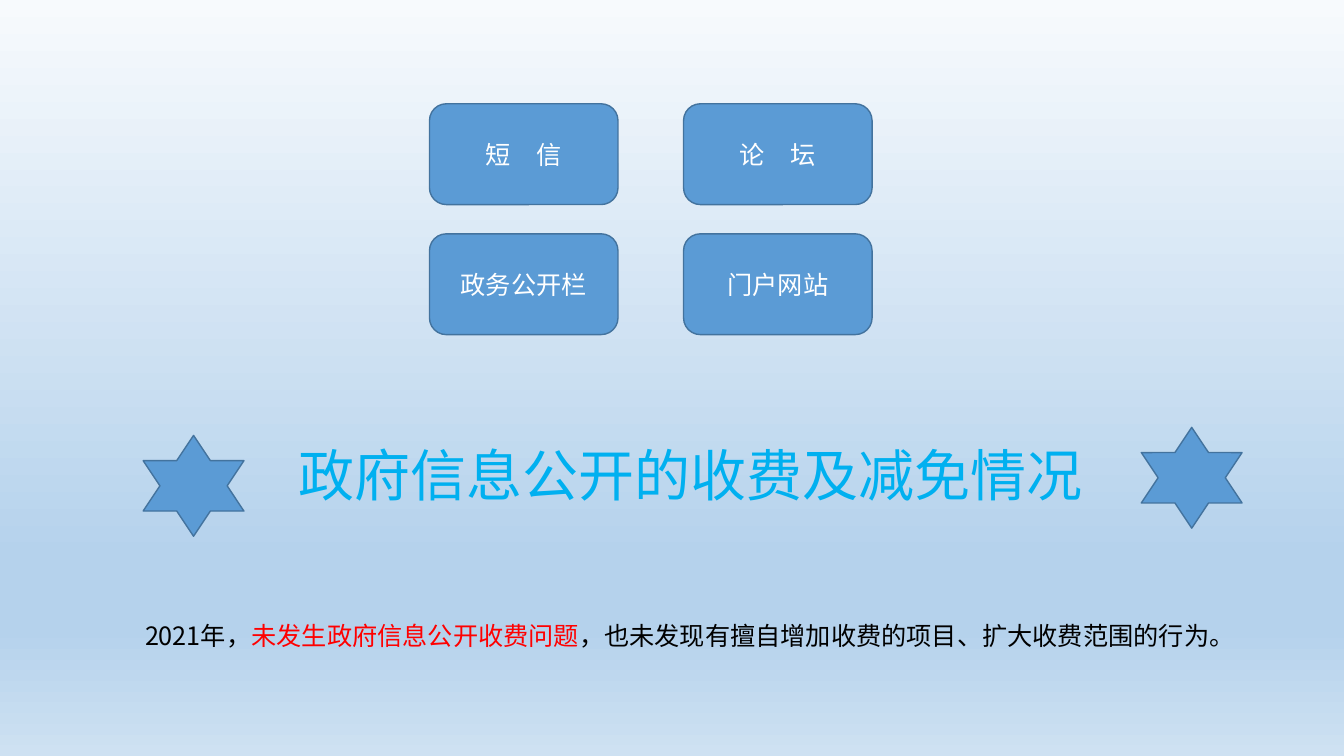
from lxml import etree
from pptx import Presentation
from pptx.dml.color import RGBColor
from pptx.enum.shapes import MSO_SHAPE as SHAPE
from pptx.enum.text import MSO_ANCHOR as ANCHOR, PP_ALIGN as ALIGN
from pptx.oxml.ns import qn
from pptx.util import Inches, Pt

BLUE = RGBColor(0x5B, 0x9B, 0xD5)
OUTLINE = RGBColor(0x43, 0x73, 0x9E)
SKY = RGBColor(0x00, 0xB0, 0xF0)
RED = RGBColor(0xFF, 0x00, 0x00)
BLACK = RGBColor(0x00, 0x00, 0x00)
WHITE = RGBColor(0xFF, 0xFF, 0xFF)
BACKGROUND = [
    (0, RGBColor(0xF7, 0xFA, 0xFD)),
    (74, RGBColor(0xB5, 0xD2, 0xEC)),
    (83, RGBColor(0xB5, 0xD2, 0xEC)),
    (100, RGBColor(0xCE, 0xE1, 0xF2)),
]
CJK_FONT = "Noto Sans CJK SC"


def add_run(p, text, size, font, color):
    r = p.add_run()
    r.text = text
    r.font.size = Pt(size)
    r.font.name = font
    r.font.color.rgb = color
    ea = etree.Element(qn("a:ea"), typeface=CJK_FONT)
    r.font._element.find(qn("a:latin")).addnext(ea)


def add_blue_shape(kind, left, top, width, height):
    sp = s.shapes.add_shape(kind, Inches(left), Inches(top), Inches(width), Inches(height))
    sp.shadow.inherit = False
    sp.fill.solid()
    sp.fill.fore_color.rgb = BLUE
    sp.line.color.rgb = OUTLINE
    sp.line.width = Pt(1)
    return sp


prs = Presentation()
prs.slide_width = Inches(13.33)
prs.slide_height = Inches(7.5)
s = prs.slides.add_slide(prs.slide_layouts[5])

fill = s.background.fill
fill.gradient()
fill.gradient_angle = 270
stops = s.background._cSld.find(".//" + qn("a:gsLst"))
for stop in list(stops):
    stops.remove(stop)
for position, color in BACKGROUND:
    stop = etree.SubElement(stops, qn("a:gs"), pos=str(position * 1000))
    etree.SubElement(stop, qn("a:srgbClr"), val=str(color))

channels = ["短　信", "论　坛", "政务公开栏", "门户网站"]
for i, channel in enumerate(channels):
    row, col = divmod(i, 2)
    sp = add_blue_shape(SHAPE.ROUNDED_RECTANGLE, 4.26 + col * 2.52, 1.03 + row * 1.29, 1.87, 1)
    tf = sp.text_frame
    tf.vertical_anchor = ANCHOR.MIDDLE
    p = tf.paragraphs[0]
    p.alignment = ALIGN.CENTER
    add_run(p, channel, 18, "Calibri", WHITE)

title = s.shapes.title
title.left, title.top = Inches(0.77), Inches(4.32)
title.width, title.height = Inches(12.16), Inches(0.77)
tf = title.text_frame
tf.word_wrap = True
tf.vertical_anchor = ANCHOR.TOP
p = tf.paragraphs[0]
p.alignment = ALIGN.CENTER
add_run(p, "政府信息公开的收费及减免情况", 40, "Arial", SKY)

box = s.shapes.add_textbox(Inches(1.34), Inches(6.1), Inches(10.86), Inches(0.4))
tf = box.text_frame
tf.word_wrap = True
p = tf.paragraphs[0]
for text, color in [
    ("2021年，", BLACK),
    ("未发生政府信息公开收费问题", RED),
    ("，也未发现有擅自增加收费的项目、扩大收费范围的行为。", BLACK),
]:
    add_run(p, text, 18, CJK_FONT, color)

for left, top in [(1.42, 4.32), (11.32, 4.24)]:
    add_blue_shape(SHAPE.STAR_6_POINT, left, top, 1, 1)

prs.save("out.pptx")
